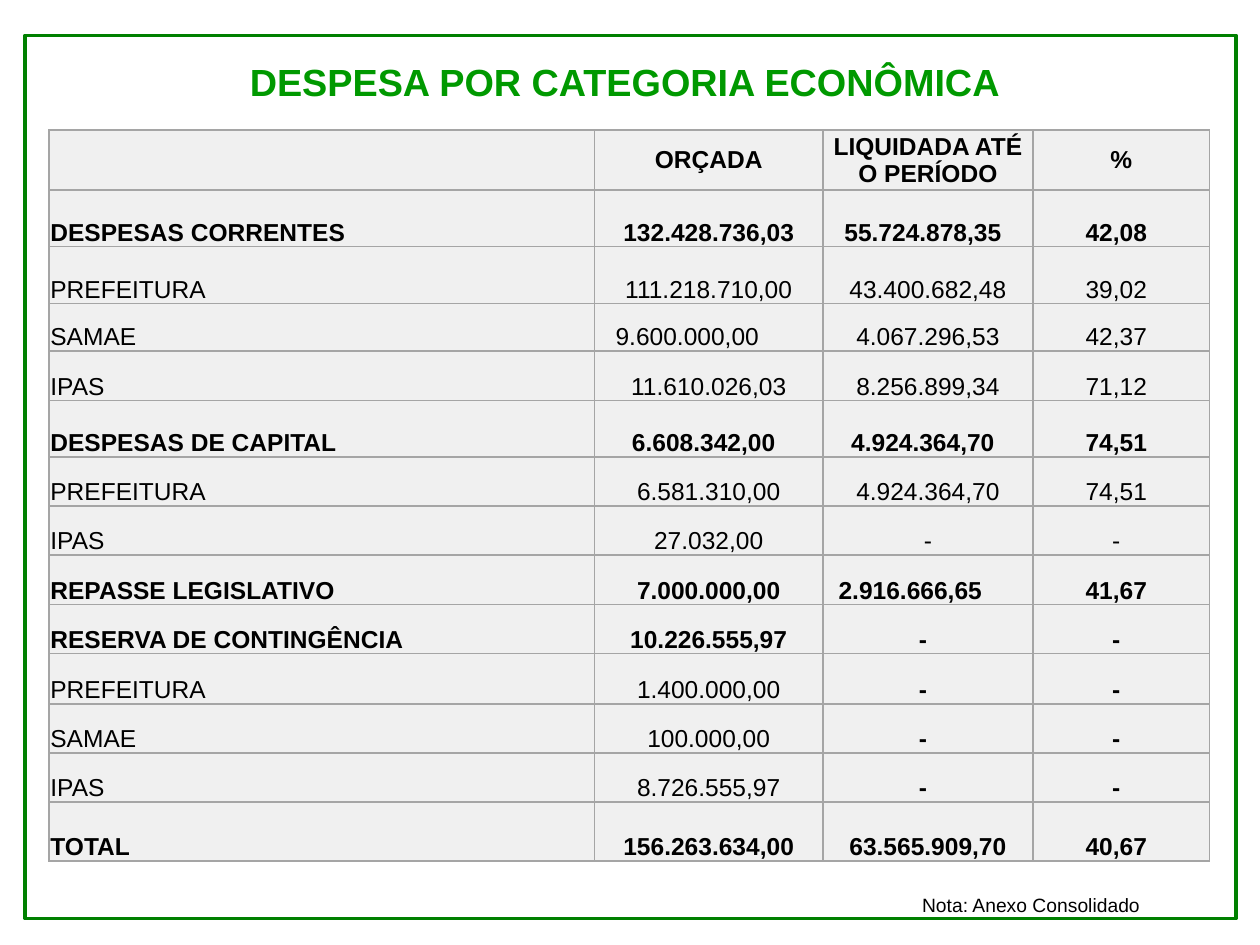
import pptx
import pptx.dml.color
import pptx.enum.shapes
import pptx.enum.text
import pptx.oxml
import pptx.oxml.ns
import pptx.util

Inches = pptx.util.Inches
Pt = pptx.util.Pt
ALIGN = pptx.enum.text.PP_ALIGN
ANCHOR = pptx.enum.text.MSO_ANCHOR

COLORS = {"frame": "008000", "title": "009900", "text": "000000",
          "cell": "F0F0F0", "border": "A5A5A5"}

COLUMN_WIDTHS = [4.33, 1.81, 1.67, 1.4]
ALL, NONE, DASHES = {0, 1, 2, 3}, set(), {2, 3}

# Row height, cell texts, bold columns
ROWS = [
    (0.47, ["", "ORÇADA", "LIQUIDADA ATÉ O PERÍODO", "%"], ALL),
    (0.45, ["DESPESAS CORRENTES", "132.428.736,03", "55.724.878,35", "42,08"], ALL),
    (0.45, ["PREFEITURA", "111.218.710,00", "43.400.682,48", "39,02"], NONE),
    (0.38, ["SAMAE", "9.600.000,00", "4.067.296,53", "42,37"], NONE),
    (0.39, ["IPAS", "11.610.026,03", "8.256.899,34", "71,12"], NONE),
    (0.45, ["DESPESAS DE CAPITAL", "6.608.342,00", "4.924.364,70", "74,51"], ALL),
    (0.39, ["PREFEITURA", "6.581.310,00", "4.924.364,70", "74,51"], NONE),
    (0.39, ["IPAS", "27.032,00", "-", "-"], NONE),
    (0.39, ["REPASSE LEGISLATIVO", "7.000.000,00", "2.916.666,65", "41,67"], ALL),
    (0.39, ["RESERVA DE CONTINGÊNCIA", "10.226.555,97", "-", "-"], ALL),
    (0.4, ["PREFEITURA", "1.400.000,00", "-", "-"], DASHES),
    (0.39, ["SAMAE", "100.000,00", "-", "-"], DASHES),
    (0.39, ["IPAS", "8.726.555,97", "-", "-"], DASHES),
    (0.47, ["TOTAL", "156.263.634,00", "63.565.909,70", "40,67"], ALL),
]

# Right insets by (row, column) that differ from the rule of their column
NARROW, WIDE = 0.01, 0.09
SPECIAL_INSETS = {(3, 1): 0.35, (5, 1): WIDE, (8, 2): 0.29}
SPECIAL_INSETS.update({(row, 2): WIDE for row in (1, 5, 9, 10, 11, 12)})


def right_inset(row, column):
    usual = WIDE if row > 0 and column in (0, 3) else NARROW
    return SPECIAL_INSETS.get((row, column), usual)


def rgb(name):
    return pptx.dml.color.RGBColor.from_string(COLORS[name])


def set_all(target, values):
    for name, value in values.items():
        setattr(target, name, value)


class SlideBuilder:
    font = "Arial"

    def __init__(self, slide):
        self.slide = slide

    def add_span(self, para, text, size, color="text", bold=False):
        span = para.add_run()
        span.text = text
        set_all(span.font, {"name": self.font, "size": Pt(size), "bold": bold})
        span.font.color.rgb = rgb(color)

    def frame(self, left, top, width, height):
        shape = self.slide.shapes.add_shape(
            pptx.enum.shapes.MSO_SHAPE.RECTANGLE,
            Inches(left), Inches(top), Inches(width), Inches(height))
        shape.shadow.inherit = False
        shape.fill.background()
        shape.line.color.rgb = rgb("frame")
        shape.line.width = Pt(2)

    def text(self, place, text, size, frame_format, para_format, **style):
        box = self.slide.shapes.add_textbox(*[Inches(value) for value in place])
        set_all(box.text_frame, {"word_wrap": True, **frame_format})
        para = box.text_frame.paragraphs[0]
        set_all(para, para_format)
        self.add_span(para, text, size, **style)

    def border(self, cell):
        properties = cell._tc.get_or_add_tcPr()
        for side in ("lnL", "lnR", "lnT", "lnB"):
            properties.append(pptx.oxml.parse_xml(
                f'<a:{side} {pptx.oxml.ns.nsdecls("a")} w="{Pt(1)}"><a:solidFill>'
                f'<a:srgbClr val="{COLORS["border"]}"/></a:solidFill></a:{side}>'))

    def cell(self, cell, text, row, column, bold):
        self.border(cell)
        cell.fill.solid()
        cell.fill.fore_color.rgb = rgb("cell")
        set_all(cell, {
            "margin_left": Inches(0.01), "margin_top": Inches(0.01),
            "margin_right": Inches(right_inset(row, column)), "margin_bottom": 0,
            "vertical_anchor": ANCHOR.BOTTOM if row else ANCHOR.MIDDLE})
        para = cell.text_frame.paragraphs[0]
        para.alignment = ALIGN.CENTER if column else ALIGN.JUSTIFY
        if text:
            self.add_span(para, text, 14, bold=bold)

    def table(self, left, top, widths, rows):
        height = sum(row[0] for row in rows)
        table = self.slide.shapes.add_table(
            len(rows), len(widths), Inches(left), Inches(top),
            Inches(sum(widths)), Inches(height)).table
        set_all(table, {"first_row": False, "horz_banding": False})
        for column, width in zip(table.columns, widths):
            column.width = Inches(width)
        for row, (row_height, texts, bold_columns) in enumerate(rows):
            table.rows[row].height = Inches(row_height)
            for column, text in enumerate(texts):
                self.cell(table.cell(row, column), text, row, column,
                          column in bold_columns)


def main():
    deck = pptx.Presentation()
    set_all(deck, {"slide_width": Inches(10), "slide_height": Inches(7.5)})
    page = SlideBuilder(deck.slides.add_slide(deck.slide_layouts[6]))
    page.frame(0.2, 0.28, 9.61, 7.01)
    page.text((0.69, 0.49, 8.62, 0.36), "DESPESA POR CATEGORIA ECONÔMICA", 21.6,
              {"vertical_anchor": ANCHOR.MIDDLE, "margin_left": 0, "margin_top": 0,
               "margin_right": Inches(0.08), "margin_bottom": 0},
              {"alignment": ALIGN.CENTER, "line_spacing": 0.9},
              color="title", bold=True)
    page.table(0.39, 1.03, COLUMN_WIDTHS, ROWS)
    page.text((7.22, 7.04, 2.6, 0.29), "Nota: Anexo Consolidado", 11,
              {"auto_size": pptx.enum.text.MSO_AUTO_SIZE.SHAPE_TO_FIT_TEXT}, {})
    deck.save("out.pptx")


if __name__ == "__main__":
    main()
